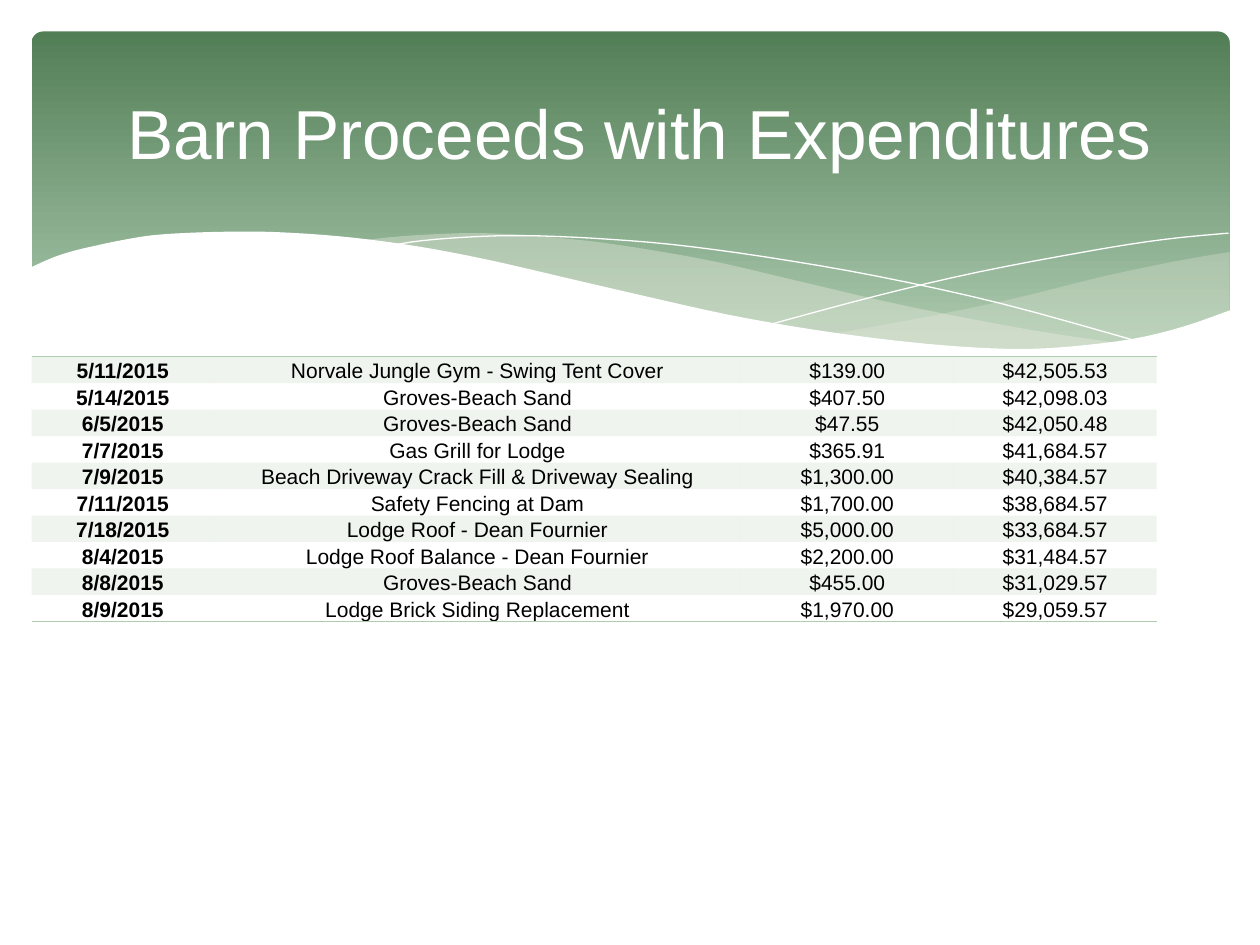
from collections import namedtuple

from lxml import etree
from pptx import Presentation
from pptx.dml.color import RGBColor
from pptx.enum.shapes import MSO_SHAPE as SHAPE
from pptx.enum.text import MSO_ANCHOR as ANCHOR, PP_ALIGN as ALIGN
from pptx.oxml.ns import qn
from pptx.util import Inches, Pt

WHITE = RGBColor(0xFF, 0xFF, 0xFF)
BLACK = RGBColor(0, 0, 0)
DARK_GREEN = RGBColor(0x52, 0x7E, 0x56)
LIGHT_GREEN = RGBColor(0xAA, 0xC8, 0xAD)
BAND_GREEN = RGBColor(0xB0, 0xCC, 0xB0)
CREAM = RGBColor(0xEA, 0xEB, 0xDE)

FONT = "Arial"
NO_STYLE = "{2D5ABB26-0587-4C30-8999-92F81FD0307C}"
COLS, ROWS = 100, 75
UNIT = Inches(10) / COLS

# Boxes are in columns and rows of the slide grid.
Box = namedtuple("Box", "left top width height")
PANEL = Box(2.5, 2.5, 95.1, 27)
WAVES = Box(0, 18, 100, 10)
TITLE = Box(8.3, 4.2, 85, 12.5)
TABLE = Box(2.5, 28.3, 89.3, 19.2)

# Curve knots are in percent of the wave box.
RIGHT_TOP = [(97.6, 20), (93.5, 27), (89.1, 36), (86.1, 43), (80.5, 57),
             (75.3, 68), (70.6, 77), (66.1, 85)]
RIGHT_BOTTOM = [(66.1, 85), (70.5, 91), (74.5, 95), (78.1, 97), (82.4, 97),
                (86.3, 95), (89.7, 90), (92.8, 83), (94.9, 77), (97.6, 67)]
MIDDLE_TOP = [(89.3, 93), (83.7, 85), (77.5, 74), (70.6, 60), (62.9, 42),
              (56.9, 28), (51.4, 18), (46.5, 11), (42, 7), (38, 5),
              (34.4, 6), (31.3, 8), (28.6, 11)]
MIDDLE_BOTTOM = [(28.6, 11), (34.2, 19), (40.4, 31), (44.9, 42), (53, 60),
                 (60.1, 75), (66.5, 86), (72.2, 94), (77.3, 97), (81.8, 98),
                 (85.7, 97), (89.3, 93)]
FALLING_LINE = [(30.9, 15), (33.5, 11), (37.4, 8), (41.6, 7), (46.9, 9),
                (53.3, 14), (60.8, 24), (69.5, 39), (79.5, 61), (90.7, 92)]
RISING_LINE = [(61.3, 77), (69.5, 55), (77.6, 36), (86.6, 19), (92.4, 10),
               (97.5, 5)]
FRONT_EDGE = [(97.7, 66), (94, 79), (89.9, 89), (85, 95), (80.9, 97),
              (76.1, 95), (70.8, 90), (64.8, 82), (57.9, 70), (50.3, 53),
              (44.7, 40), (39.1, 27), (34, 17), (29.2, 10), (25, 6),
              (21.1, 4), (17.7, 4), (14.6, 5), (11.9, 7), (9.5, 11),
              (7.6, 15), (5.9, 19), (4.6, 23), (3.6, 27), (2.3, 33)]
FRONT_BASE = [(2.3, 149), (97.7, 149)]

COLUMN_SHARES = (1.45, 4.18, 1.69, 1.61)
EXPENSES = [
    ("5/11/2015", "Norvale Jungle Gym - Swing Tent Cover", "$139.00", "$42,505.53"),
    ("5/14/2015", "Groves-Beach Sand", "$407.50", "$42,098.03"),
    ("6/5/2015", "Groves-Beach Sand", "$47.55", "$42,050.48"),
    ("7/7/2015", "Gas Grill for Lodge", "$365.91", "$41,684.57"),
    ("7/9/2015", "Beach Driveway Crack Fill & Driveway Sealing", "$1,300.00", "$40,384.57"),
    ("7/11/2015", "Safety Fencing at Dam", "$1,700.00", "$38,684.57"),
    ("7/18/2015", "Lodge Roof - Dean Fournier", "$5,000.00", "$33,684.57"),
    ("8/4/2015", "Lodge Roof Balance - Dean Fournier", "$2,200.00", "$31,484.57"),
    ("8/8/2015", "Groves-Beach Sand", "$455.00", "$31,029.57"),
    ("8/9/2015", "Lodge Brick Siding Replacement", "$1,970.00", "$29,059.57"),
]


def emu(box):
    return [round(v * UNIT) for v in box]


def put_text(tf, text, size, color, bold=False):
    p = tf.paragraphs[0]
    p.alignment = ALIGN.CENTER
    r = p.add_run()
    r.text = text
    r.font.name, r.font.size, r.font.bold = FONT, Pt(size), bold
    r.font.color.rgb = color


def set_fill(fill, parent, color, opacity=100):
    fill.solid()
    fill.fore_color.rgb = color
    if opacity < 100:
        clr = parent.find(qn("a:solidFill")).find(qn("a:srgbClr"))
        etree.SubElement(clr, qn("a:alpha"), val=str(opacity * 1000))


def smooth(knots, steps=4):
    """Points of a Catmull-Rom curve through the knots."""
    ends = [knots[0], *knots, knots[-1]]
    points = [knots[0]]
    for a, b, c, d in zip(ends, ends[1:], ends[2:], ends[3:]):
        for i in range(1, steps + 1):
            t = i / steps
            points.append(tuple(
                q + t / 2 * (s - p + t * (2*p - 5*q + 4*s - e + t * (3*q - p - 3*s + e)))
                for p, q, s, e in zip(a, b, c, d)))
    return points


def add_outline(slide, box, points, closed):
    left, top, width, height = emu(box)
    pts = [(round(left + width * x / 100), round(top + height * y / 100))
           for x, y in points]
    builder = slide.shapes.build_freeform(*pts[0], scale=1.0)
    builder.add_line_segments(pts[1:], close=closed)
    s = builder.convert_to_shape()
    s.shadow.inherit = False
    return s


def add_wave(slide, box, points, color, opacity=100):
    s = add_outline(slide, box, points, True)
    set_fill(s.fill, s._element.spPr, color, opacity)
    s.line.fill.background()


def add_hairline(slide, box, points):
    s = add_outline(slide, box, points, False)
    s.fill.background()
    s.line.color.rgb = WHITE
    s.line.width = 0


def add_panel(slide, box):
    s = slide.shapes.add_shape(SHAPE.ROUNDED_RECTANGLE, *emu(box))
    s.adjustments[0] = 0.034
    s.shadow.inherit = False
    s.line.fill.background()
    s.fill.gradient()
    s.fill.gradient_angle = 270
    for stop, color, position in zip(s.fill.gradient_stops,
                                     (DARK_GREEN, LIGHT_GREEN), (0, 0.9)):
        stop.color.rgb = color
        stop.position = position


def add_waves(slide, box):
    add_wave(slide, box, smooth(RIGHT_TOP) + smooth(RIGHT_BOTTOM), CREAM, 29)
    add_wave(slide, box, smooth(MIDDLE_TOP) + smooth(MIDDLE_BOTTOM), CREAM, 40)
    add_hairline(slide, box, smooth(FALLING_LINE))
    add_hairline(slide, box, smooth(RISING_LINE))
    add_wave(slide, box, smooth(FRONT_EDGE) + FRONT_BASE, WHITE)


def add_title(slide, box, text):
    tf = slide.shapes.add_textbox(*emu(box)).text_frame
    tf.word_wrap = True
    tf.vertical_anchor = ANCHOR.MIDDLE
    put_text(tf, text, 39.6, WHITE)


def add_border(cell, side):
    ln = etree.Element(qn(f"a:ln{side}"), w=str(Pt(1)))
    fill = etree.SubElement(ln, qn("a:solidFill"))
    etree.SubElement(fill, qn("a:srgbClr"), val=str(BAND_GREEN))
    cell._tc.get_or_add_tcPr().insert(0, ln)


def add_expenses(slide, box, rows):
    left, top, width, height = emu(box)
    table = slide.shapes.add_table(len(rows), len(COLUMN_SHARES),
                                   left, top, width, height).table
    table._tbl.tblPr.find(qn("a:tableStyleId")).text = NO_STYLE
    table.first_row = table.horz_banding = False
    for col, share in zip(table.columns, COLUMN_SHARES):
        col.width = round(width * share / sum(COLUMN_SHARES))
    for i, row in enumerate(rows):
        for j, text in enumerate(row):
            cell = table.cell(i, j)
            cell.margin_left = cell.margin_right = cell.margin_top = Inches(0.01)
            cell.margin_bottom = 0
            cell.vertical_anchor = ANCHOR.BOTTOM
            put_text(cell.text_frame, text, 12, BLACK, bold=j == 0)
            if i % 2:
                cell.fill.background()
            else:
                set_fill(cell.fill, cell._tc.tcPr, BAND_GREEN, 20)
            if i == 0:
                add_border(cell, "T")
            elif i == len(rows) - 1:
                add_border(cell, "B")


def main():
    prs = Presentation()
    prs.slide_width, prs.slide_height = round(COLS * UNIT), round(ROWS * UNIT)
    slide = prs.slides.add_slide(prs.slide_layouts[6])
    add_panel(slide, PANEL)
    add_waves(slide, WAVES)
    add_title(slide, TITLE, "Barn Proceeds with Expenditures")
    add_expenses(slide, TABLE, EXPENSES)
    prs.save("out.pptx")


if __name__ == "__main__":
    main()
